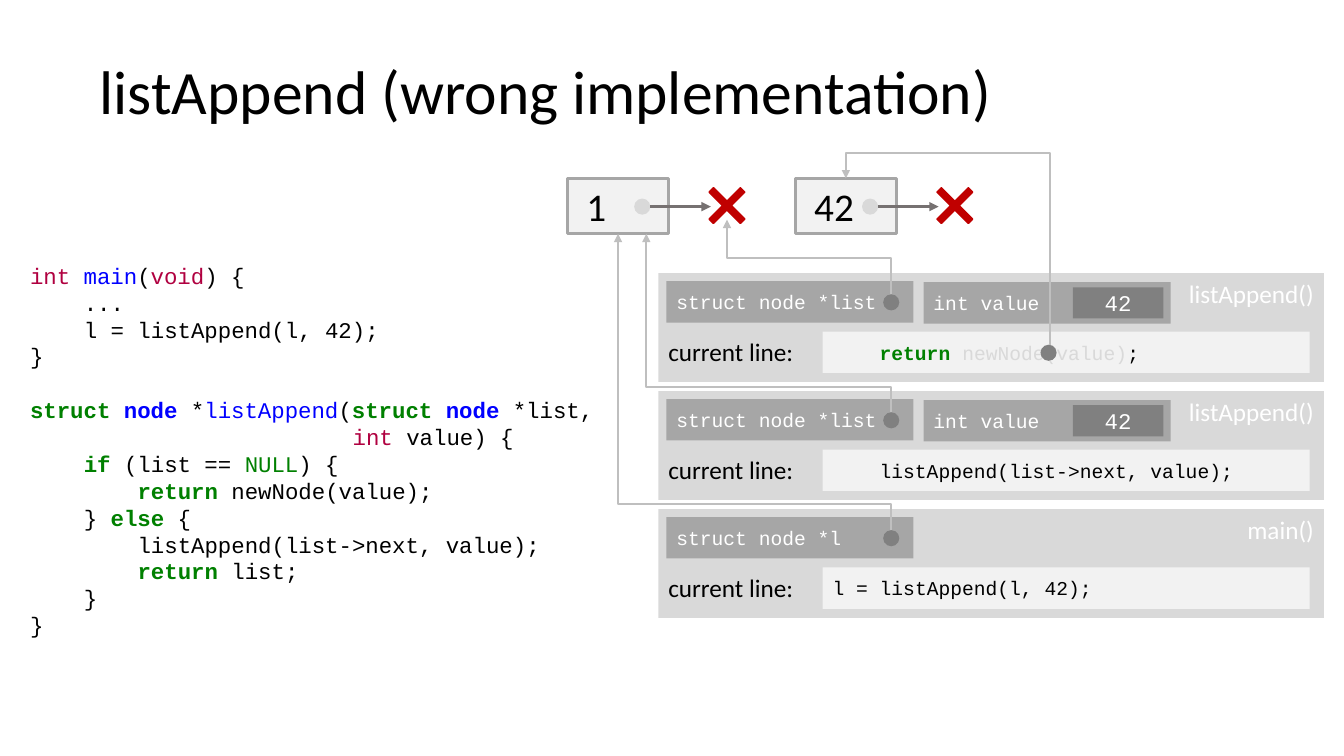
import pptx
import pptx.util
import pptx.dml.color
import pptx.enum.shapes
import pptx.enum.text
import pptx.oxml
import pptx.oxml.ns

Inches, Pt = pptx.util.Inches, pptx.util.Pt
SHAPE = pptx.enum.shapes.MSO_SHAPE
CONN = pptx.enum.shapes.MSO_CONNECTOR
ANCHOR = pptx.enum.text.MSO_ANCHOR
ALIGN = pptx.enum.text.PP_ALIGN
qn = pptx.oxml.ns.qn
SANS, MONO = "Calibri", "Courier New"

# ---- Content ----
TITLE = "listAppend (wrong implementation)"
# token style: (colour, bold)
STYLES = {"": ("000000", False), "type": ("B00040", False),
          "name": ("0000FF", False), "struct": ("0000FF", True),
          "key": ("008000", True), "const": ("008000", False),
          "faded": ("D9D9D9", False), "white": ("FFFFFF", False)}
# each code line: indent in characters, then (text, style) runs
MAIN_CODE = [
    (0, [("int ", "type"), ("main", "name"), ("(", ""), ("void", "type"), (") {", "")]),
    (4, [("...", "")]),
    (4, [("l = listAppend(l, 42);", "")]),
    (0, [("}", "")]),
]
APPEND_CODE = [
    (0, [("struct ", "key"), ("node", "struct"), (" *", ""), ("listAppend", "name"),
         ("(", ""), ("struct ", "key"), ("node", "struct"), (" *list,", "")]),
    (24, [("int", "type"), (" value) {", "")]),
    (4, [("if", "key"), (" (list == ", ""), ("NULL", "const"), (") {", "")]),
    (8, [("return ", "key"), ("newNode(value);", "")]),
    (4, [("} ", ""), ("else", "key"), (" {", "")]),
    (8, [("listAppend(list->next, value);", "")]),
    (8, [("return", "key"), (" list;", "")]),
    (4, [("}", "")]),
    (0, [("}", "")]),
]
# stack frames, bottom up: function, pointer, value, indent, current line,
# then the pointer arrow: bend y, target x, target y
FRAMES = [
    ("main()", "struct node *l", None, 0,
     [("l = listAppend(l, 42);", "")], (5.0, 6.13, 2.32)),
    ("listAppend()", "struct node *list", "42", 4,
     [("listAppend(list->next, value);", "")], (3.84, 6.41, 2.32)),
    ("listAppend()", "struct node *list", "42", 4,
     [("return ", "key"), ("newNode(value)", "faded"), (";", "")], (2.56, 7.21, 2.18)),
]
FRAME_LEFT, FRAME_BOTTOM_ROW, FRAME_STEP = 6.53, 5.05, 1.17
NODES = [(" 1", 5.63), (" 42", 7.89)]
NODE_TOP, DOT = 1.77, 0.16


# ---- Helpers ----
def rgb(value):
    return pptx.dml.color.RGBColor.from_string(value)


def write(tf, runs, size, font, align=ALIGN.LEFT, indent=0, first=True):
    p = tf.paragraphs[0] if first else tf.add_paragraph()
    p.alignment = align
    if indent:  # a monospaced character is 0.6 em wide
        p._p.get_or_add_pPr().set("marL", str(Pt(indent * size * 0.6)))
    for text, style in runs:
        r = p.add_run()
        r.text = text
        r.font.name, r.font.size = font, Pt(size)
        color, r.font.bold = STYLES[style]
        r.font.color.rgb = rgb(color)
    return p


def shape(shapes, kind, x, y, w, h, fill, line=None, width=1):
    sp = shapes.add_shape(kind, Inches(x), Inches(y), Inches(w), Inches(h))
    sp.shadow.inherit = False
    sp.fill.solid()
    sp.fill.fore_color.rgb = rgb(fill)
    if line:
        sp.line.color.rgb = rgb(line)
        sp.line.width = Pt(width)
    else:
        sp.line.fill.background()
    return sp


def box(shapes, x, y, w, h, fill, runs, size=14, font=MONO, align=ALIGN.LEFT,
        indent=0, anchor=ANCHOR.MIDDLE, line=None, width=1):
    sp = shape(shapes, SHAPE.RECTANGLE, x, y, w, h, fill, line, width)
    sp.text_frame.vertical_anchor = anchor
    write(sp.text_frame, runs, size, font, align, indent)


def textbox(shapes, x, y, w, h, anchor=ANCHOR.TOP):
    tb = shapes.add_textbox(Inches(x), Inches(y), Inches(w), Inches(h))
    tb.text_frame.word_wrap = True
    tb.text_frame.vertical_anchor = anchor
    return tb.text_frame


def arrow(shapes, kind, x1, y1, x2, y2, color, width):
    c = shapes.add_connector(kind, Inches(x1), Inches(y1), Inches(x2), Inches(y2))
    c.line.color.rgb = rgb(color)
    c.line.width = Pt(width)
    tail = pptx.oxml.parse_xml(
        '<a:tailEnd %s type="triangle"/>' % pptx.oxml.ns.nsdecls("a"))
    c.line._get_or_add_ln().append(tail)
    c._element.spPr.append(pptx.oxml.parse_xml(
        "<a:effectLst %s/>" % pptx.oxml.ns.nsdecls("a")))
    return c


def pointer(shapes, x1, y1, x2, y2, bend):
    """Up from (x1, y1), across at height bend, then to (x2, y2) on the left."""
    cx, cy = (x1 + x2) / 2, (y1 + y2) / 2
    half_w, half_h = (y1 - y2) / 2, (x1 - x2) / 2
    c = arrow(shapes, CONN.ELBOW, cx - half_w, cy + half_h,
              cx + half_w, cy - half_h, "BFBFBF", 1.5)
    spPr = c._element.spPr
    spPr.find(qn("a:xfrm")).set("rot", "16200000")
    geom = spPr.find(qn("a:prstGeom"))
    for old in geom.findall(qn("a:avLst")):
        geom.remove(old)
    share = round((y1 - bend) / (y1 - y2) * 100000)
    geom.append(pptx.oxml.parse_xml(
        '<a:avLst %s><a:gd name="adj1" fmla="val %d"/></a:avLst>'
        % (pptx.oxml.ns.nsdecls("a"), share)))


def node(text, x):
    g = s.shapes.add_group_shape().shapes
    y = NODE_TOP
    box(g, x, y, 1, 0.55, "F2F2F2", [(text, "")], 28, SANS, line="A6A6A6", width=2.25)
    shape(g, SHAPE.OVAL, x + 0.66, y + 0.2, DOT, DOT, "D9D9D9")
    cross = shape(g, SHAPE.CROSS, x + 1.36, y + 0.05, 0.44, 0.44, "C00000", "C00000")
    cross.adjustments[0] = 0.43
    cross.rotation = 45
    arrow(g, CONN.STRAIGHT, x + 0.82, y + 0.28, x + 1.42, y + 0.28, "767171", 2.25)


def frame(y, func, var, value, indent, current):
    g = s.shapes.add_group_shape().shapes
    x = FRAME_LEFT
    box(g, x, y, 6.6, 1.08, "D9D9D9", [(func, "white")], 18, SANS,
        ALIGN.RIGHT, anchor=ANCHOR.TOP)
    write(textbox(g, x, y + 0.58, 1.63, 0.41), [("current line:", "")], 18, SANS)
    box(g, x + 1.63, y + 0.58, 4.83, 0.41, "F2F2F2", current, indent=indent)
    box(g, x + 0.08, y + 0.08, 2.45, 0.41, "A6A6A6", [(var, "white")])
    shape(g, SHAPE.OVAL, x + 2.23, y + 0.21, DOT, DOT, "808080")
    if value:
        box(g, x + 2.63, y + 0.09, 2.45, 0.41, "A6A6A6", [("int value", "white")])
        box(g, x + 4.11, y + 0.14, 0.9, 0.31, "808080", [(value, "white")],
            16, align=ALIGN.CENTER)


# ---- Slide ----
prs = pptx.Presentation()
prs.slide_width, prs.slide_height = Inches(13.33), Inches(7.5)
s = prs.slides.add_slide(prs.slide_layouts[6])

# Title
tf = textbox(s.shapes, 0.89, 0.21, 10.46, 1.45, ANCHOR.MIDDLE)
write(tf, [(TITLE, "")], 44, SANS).line_spacing = 0.9

# Code listing
tf = textbox(s.shapes, 0.2, 2.55, 6.34, 3.87)
for i, (indent, runs) in enumerate(MAIN_CODE + APPEND_CODE):
    p = write(tf, runs, 16, MONO, indent=indent, first=i == 0)
    p.line_spacing = Pt(19.2)
    if i == len(MAIN_CODE):
        p.space_before = Pt(19.2)

# First list node, then the call stack with its pointers
node(*NODES[0])
for i, (*parts, (bend, to_x, to_y)) in enumerate(FRAMES):
    top = FRAME_BOTTOM_ROW - i * FRAME_STEP
    frame(top, *parts)
    pointer(s.shapes, FRAME_LEFT + 2.31, top + 0.21, to_x, to_y, bend)

# New node and the returned pointer to it
node(*NODES[1])
shape(s.shapes, SHAPE.OVAL, 10.32, 3.42, DOT, DOT, "808080")
pointer(s.shapes, 10.41, 3.42, 8.39, NODE_TOP, 1.52)

prs.save("out.pptx")
